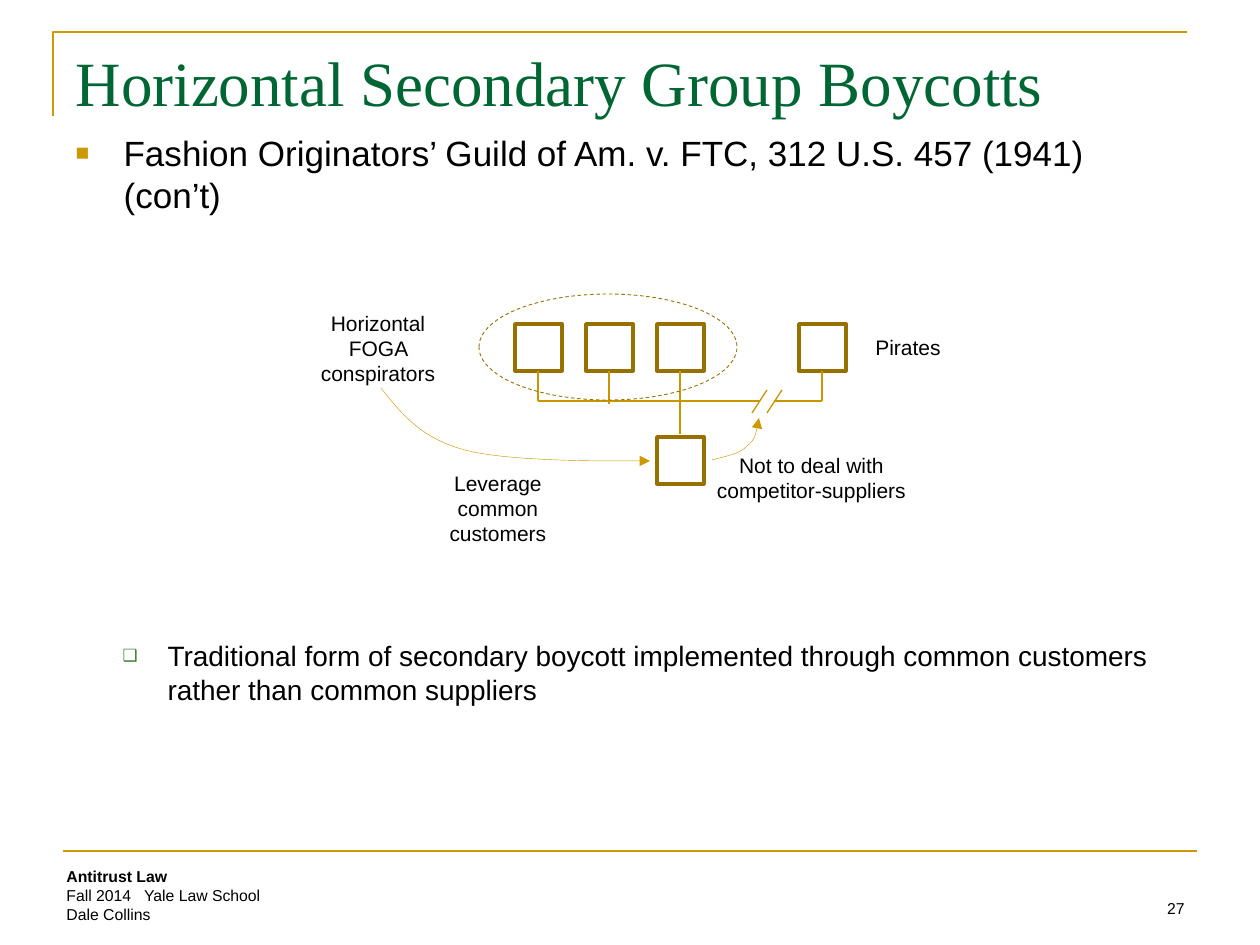
from dataclasses import dataclass

from lxml.etree import SubElement
from pptx import Presentation
from pptx.dml.color import RGBColor
from pptx.enum.dml import MSO_LINE
from pptx.enum.shapes import MSO_CONNECTOR, MSO_SHAPE
from pptx.enum.text import MSO_ANCHOR, MSO_AUTO_SIZE, PP_ALIGN
from pptx.oxml.ns import qn
from pptx.util import Pt

EMU_PER_PX = 914400 / 126


@dataclass(frozen=True)
class Theme:
    gold: str = "CC9900"
    link: str = "C89600"
    outline: str = "977100"
    title: str = "006633"
    sub_bullet: str = "3B812F"
    ink: str = "000000"
    serif: str = "Times New Roman"
    sans: str = "Arial"
    title_size: int = 36
    bullet_size: int = 20
    sub_size: int = 16
    label_size: int = 12
    footer_size: int = 9


THEME = Theme()


def px(length):
    return round(length * EMU_PER_PX)


def style_runs(paragraph, size, color=THEME.ink, font=THEME.sans):
    for run in paragraph.runs:
        run.font.size = Pt(size)
        run.font.name = font
        run.font.color.rgb = RGBColor.from_string(color)


def style_line(shape, color, width, arrow=False):
    shape.line.color.rgb = RGBColor.from_string(color)
    shape.line.width = Pt(width)
    if arrow:
        SubElement(shape.line._get_or_add_ln(), qn("a:tailEnd"), type="triangle")


def place(shape, left, top, width, height):
    shape.left, shape.top = px(left), px(top)
    shape.width, shape.height = px(width), px(height)


def add_line(slide, start, end, color=THEME.link, width=0.75):
    line = slide.shapes.add_connector(
        MSO_CONNECTOR.STRAIGHT, *map(px, (*start, *end)))
    style_line(line, color, width)
    SubElement(line._element.spPr, qn("a:effectLst"))


def add_outline(slide, kind, box, width, dash=None):
    outline = slide.shapes.add_shape(kind, *map(px, box))
    outline.shadow.inherit = False
    outline.fill.background()
    style_line(outline, THEME.outline, width)
    if dash:
        outline.line.dash_style = dash


def add_stroke(slide, points, width, curved=False):
    builder = slide.shapes.build_freeform(*points[0], scale=EMU_PER_PX)
    builder.add_line_segments(points[1:], close=False)
    stroke = builder.convert_to_shape()
    stroke.shadow.inherit = False
    stroke.fill.background()
    style_line(stroke, THEME.gold, width, arrow=curved)
    if curved:
        segments = list(stroke._element.iter(qn("a:lnTo")))
        for first in range(0, len(segments), 3):
            curve = SubElement(segments[first].getparent(), qn("a:cubicBezTo"))
            for segment in segments[first:first + 3]:
                curve.append(segment[0])
                segment.getparent().remove(segment)


def add_text(slide, text, box, size=THEME.label_size, align=PP_ALIGN.CENTER,
             anchor=MSO_ANCHOR.TOP, wrap=True):
    label = slide.shapes.add_textbox(*map(px, box))
    frame = label.text_frame
    frame.word_wrap = wrap
    frame.vertical_anchor = anchor
    paragraph = frame.paragraphs[0]
    paragraph.text = text
    paragraph.alignment = align
    style_runs(paragraph, size)
    return paragraph


def add_bullet(paragraph, char, color, percent, margin, indent):
    properties = paragraph._p.get_or_add_pPr()
    properties.set("marL", str(px(margin)))
    properties.set("indent", str(px(indent)))
    SubElement(SubElement(properties, qn("a:buClr")), qn("a:srgbClr"), val=color)
    SubElement(properties, qn("a:buSzPct"), val=str(percent * 1000))
    SubElement(properties, qn("a:buFont"), typeface=THEME.sans)
    SubElement(properties, qn("a:buChar"), char=char)


def fill_title(slide, text):
    title = slide.shapes.title
    place(title, 63, 38, 1134, 86)
    frame = title.text_frame
    frame.text = text
    frame.auto_size = MSO_AUTO_SIZE.NONE
    frame.vertical_anchor = MSO_ANCHOR.MIDDLE
    frame.paragraphs[0].alignment = PP_ALIGN.LEFT
    style_runs(frame.paragraphs[0], THEME.title_size, THEME.title, THEME.serif)


def fill_body(slide, case, remark):
    body = slide.placeholders[1]
    place(body, 63, 125, 1134, 719)
    frame = body.text_frame
    frame.text = f"{case}\n{remark}"
    frame.auto_size = MSO_AUTO_SIZE.NONE
    case_line, remark_line = frame.paragraphs
    case_line.space_before = Pt(12)
    style_runs(case_line, THEME.bullet_size)
    add_bullet(case_line, "■", THEME.gold, 65, 48, -48)
    remark_line.level = 1
    remark_line.space_before = Pt(242)
    style_runs(remark_line, THEME.sub_size)
    add_bullet(remark_line, "❑", THEME.sub_bullet, 60, 92, -45)


def add_frame(slide):
    add_stroke(slide, [(53, 116), (53, 32), (1187, 32)], 1.5)
    add_line(slide, (63, 851), (1197, 851), THEME.gold, 1.5)
    course = add_text(
        slide, "Antitrust Law\vFall 2014   Yale Law School\vDale Collins",
        (54, 861, 588, 71), THEME.footer_size, PP_ALIGN.LEFT)
    course.runs[0].font.bold = True
    add_text(slide, "27", (903, 861, 294, 63), THEME.footer_size,
             PP_ALIGN.RIGHT, MSO_ANCHOR.BOTTOM)


def add_boycott_diagram(slide):
    side, pitch, left, top, bus = 47, 71, 515, 324, 401
    supplier_lefts = [left + pitch * slot for slot in (0, 1, 2, 4)]
    customer = (supplier_lefts[2], 437)
    for corner in [customer, *((x, top) for x in supplier_lefts)]:
        add_outline(slide, MSO_SHAPE.RECTANGLE, (*corner, side, side), 2)

    centers = [x + side // 2 for x in supplier_lefts]
    for center, bottom in zip(centers, (bus, bus + 3, customer[1] - 3, bus)):
        add_line(slide, (center, top + side), (center, bottom))
    add_line(slide, (centers[0], bus), (760, bus))
    add_line(slide, (774, bus), (centers[3], bus))
    for slash_left in (752, 767):
        add_line(slide, (slash_left + 15, 390), (slash_left, 413))

    add_outline(slide, MSO_SHAPE.OVAL, (479, 294, 258, 106), 0.5, MSO_LINE.DASH)
    add_text(slide, "Horizontal FOGA conspirators", (307, 304, 142, 89))
    add_text(slide, "Leverage common customers", (403, 464, 190, 89))
    add_text(slide, "Not to deal with competitor-suppliers", (704, 446, 215, 63))
    add_text(slide, "Pirates", (863, 328, 91, 38), align=PP_ALIGN.LEFT, wrap=False)
    add_stroke(slide, [(381, 388), (401, 413), (420, 438), (465, 450),
                       (510, 462), (650, 461), (650, 461)], 0.25, curved=True)
    add_stroke(slide, [(712, 460), (726, 456), (740, 454), (747, 446),
                       (755, 440), (757, 430), (759, 418)], 0.25, curved=True)


def main():
    deck = Presentation()
    deck.slide_width, deck.slide_height = px(1260), px(945)
    slide = deck.slides.add_slide(deck.slide_layouts[1])
    add_frame(slide)
    fill_title(slide, "Horizontal Secondary Group Boycotts")
    fill_body(
        slide,
        "Fashion Originators’ Guild of Am. v. FTC, 312 U.S. 457 (1941) (con’t)",
        "Traditional form of secondary boycott implemented through common "
        "customers rather than common suppliers")
    add_boycott_diagram(slide)
    deck.save("out.pptx")


if __name__ == "__main__":
    main()
